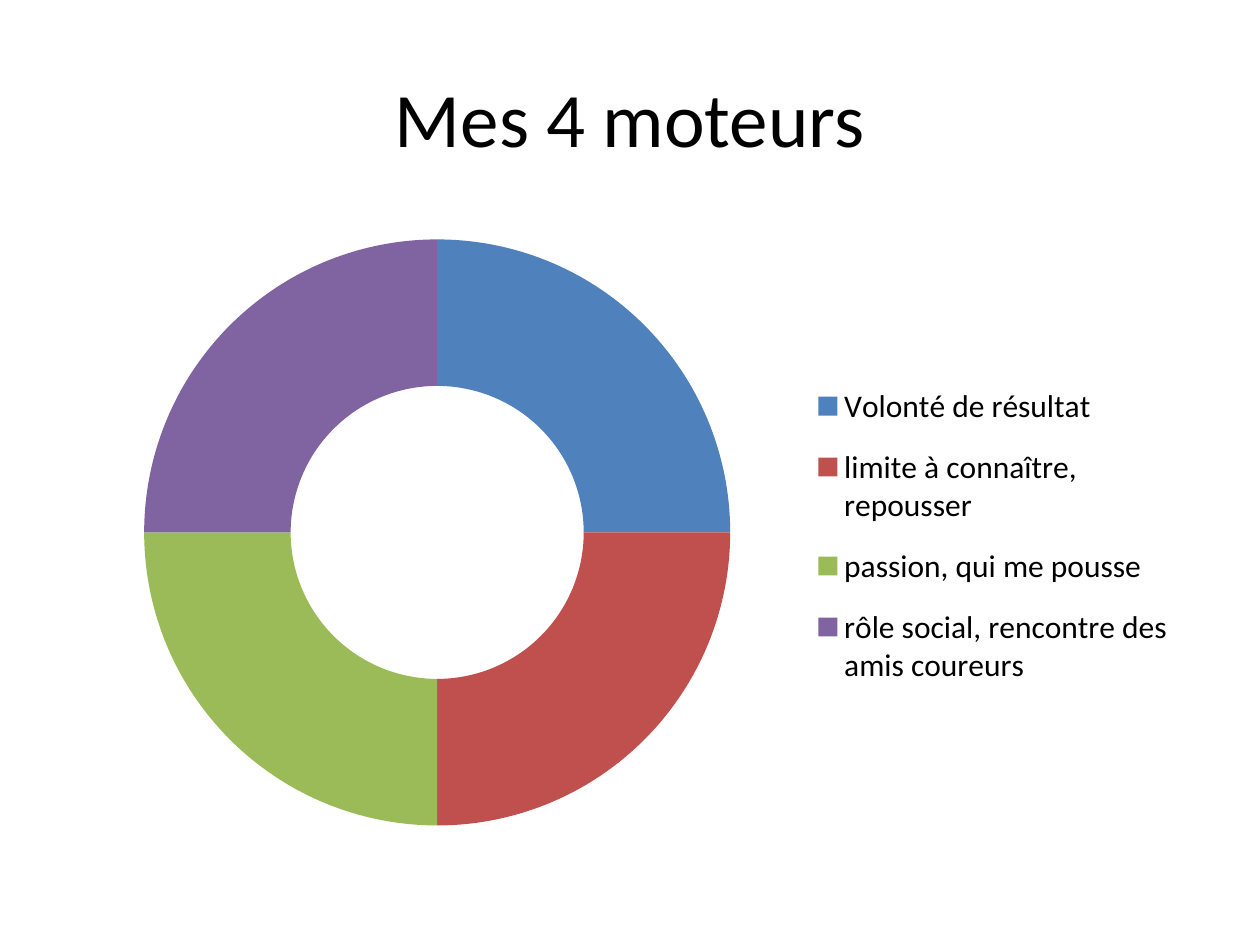
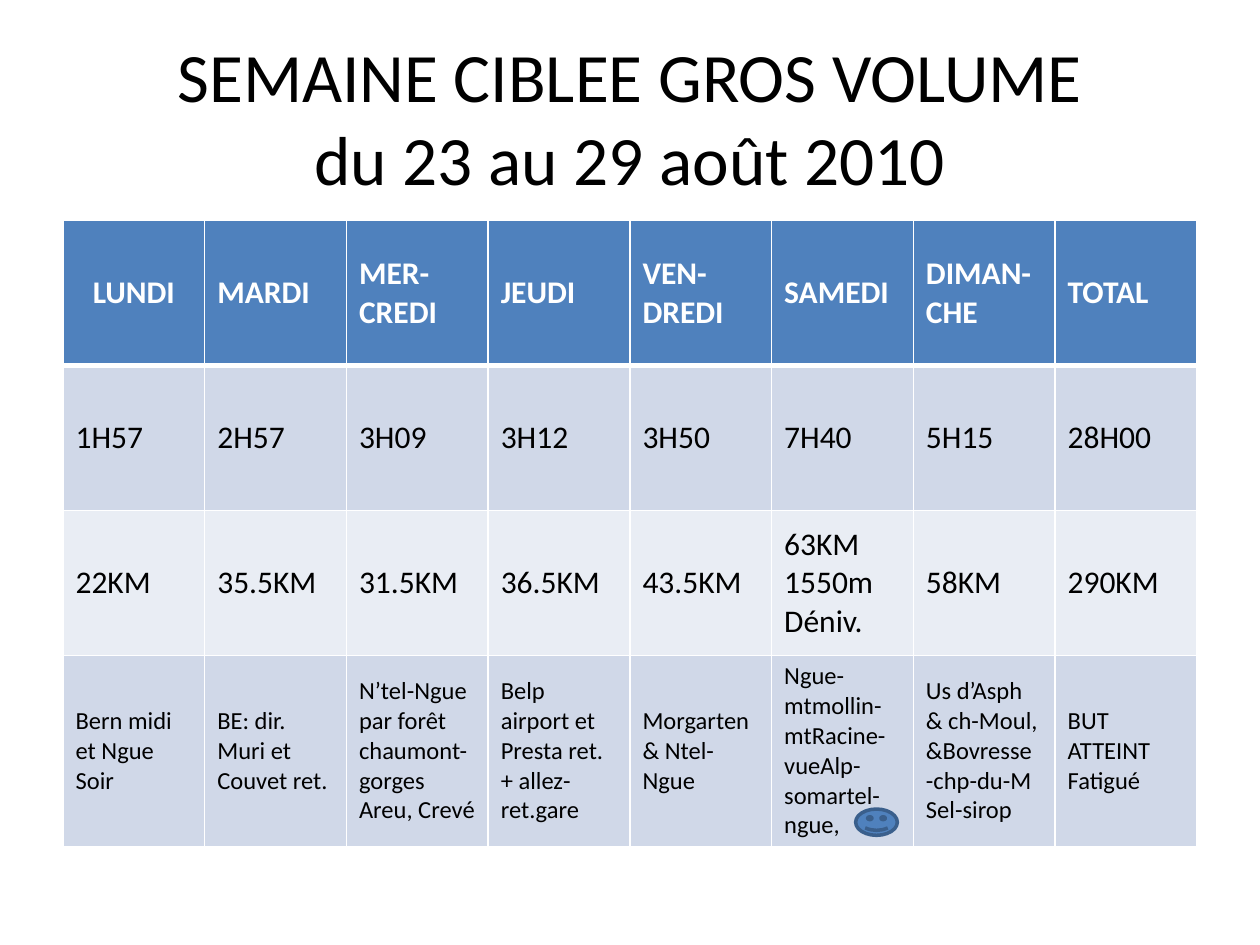
from lxml import etree
from pptx import Presentation
from pptx.chart.data import CategoryChartData
from pptx.dml.color import RGBColor
from pptx.enum.chart import XL_CHART_TYPE, XL_LEGEND_POSITION
from pptx.enum.shapes import MSO_SHAPE
from pptx.enum.text import MSO_ANCHOR, PP_ALIGN
from pptx.oxml.ns import qn
from pptx.util import Cm, Pt

DOUGHNUT = XL_CHART_TYPE.DOUGHNUT
LEGEND_RIGHT = XL_LEGEND_POSITION.RIGHT
SMILEY = MSO_SHAPE.SMILEY_FACE
MIDDLE = MSO_ANCHOR.MIDDLE
LEFT, CENTER = PP_ALIGN.LEFT, PP_ALIGN.CENTER

FONT = "Calibri"
COLORS = {
    "text": "000000",
    "white": "FFFFFF",
    "blue": "4F81BD",
    "red": "C0504D",
    "green": "9BBB59",
    "purple": "8064A2",
    "band": "D0D8E8",
    "light_band": "E9EDF4",
    "smiley_line": "3A5F8C",
}
CONTENT_FRAME = (Cm(1.27), Cm(4.45), Cm(22.86), Cm(12.57))


def style_font(font, size, color="text", bold=False):
    values = {"name": FONT, "size": Pt(size), "bold": bold}
    for name, value in values.items():
        setattr(font, name, value)
    font.color.rgb = RGBColor.from_string(COLORS[color])


def add_titled_page(title, size):
    page = deck.slides.add_slide(deck.slide_layouts[6])
    box = page.shapes.add_textbox(Cm(1.27), Cm(0.76), Cm(22.86), Cm(3.18))
    box.text_frame.word_wrap = True
    box.text_frame.vertical_anchor = MIDDLE
    para = box.text_frame.paragraphs[0]
    para.text = title
    para.alignment = CENTER
    for span in para.runs:
        style_font(span.font, size)
    # Line breaks take their height from the paragraph font
    style_font(para.font, size)
    return page


deck = Presentation()
deck.slide_width, deck.slide_height = Cm(25.4), Cm(19.05)

# Slide 1: the four motivations
page = add_titled_page("Mes 4 moteurs", 44)
motivations = {
    "Volonté de résultat": "blue",
    "limite à connaître, repousser": "red",
    "passion, qui me pousse": "green",
    "rôle social, rencontre des amis coureurs": "purple",
}
chart_data = CategoryChartData()
chart_data.categories = list(motivations)
chart_data.add_series("Series 1", [25] * len(motivations))
chart = page.shapes.add_chart(DOUGHNUT, *CONTENT_FRAME, chart_data).chart
style_font(chart.font, 18)
chart.has_title = False
chart.has_legend = True
chart.legend.position = LEGEND_RIGHT
chart.legend.include_in_layout = False
plot = chart.plots[0]
plot.vary_by_categories = True
for index, color in enumerate(motivations.values()):
    fill = plot.series[0].points[index].format.fill
    fill.solid()
    fill.fore_color.rgb = RGBColor.from_string(COLORS[color])

# Fixed places of ring and legend, as shares of the chart frame
plot_area = chart._chartSpace.chart.plotArea
legend = chart.legend._element
for layout in plot_area.findall(qn("c:layout")) + legend.findall(qn("c:layout")):
    layout.getparent().remove(layout)
placements = [
    (plot_area, 0, {"layoutTarget": "inner", "x": 0.07, "y": 0.03, "w": 0.52, "h": 0.94}),
    (legend, 1, {"x": 0.66, "y": 0.23, "w": 0.32, "h": 0.55}),
]
for parent, position, values in placements:
    layout = etree.Element(qn("c:layout"))
    parent.insert(position, layout)
    manual = etree.SubElement(layout, qn("c:manualLayout"))
    target = values.pop("layoutTarget", None)
    if target:
        etree.SubElement(manual, qn("c:layoutTarget"), val=target)
    for axis in "xy":
        etree.SubElement(manual, qn(f"c:{axis}Mode"), val="edge")
    for name, value in values.items():
        etree.SubElement(manual, qn(f"c:{name}"), val=str(value))

# Slide 2: the training week
page = add_titled_page("SEMAINE CIBLEE GROS VOLUME\vdu 23 au 29 août 2010", 39.6)
week = [
    ["LUNDI", "MARDI", "MER-CREDI", "JEUDI", "VEN-DREDI", "SAMEDI", "DIMAN-CHE", "TOTAL"],
    ["1H57", "2H57", "3H09", "3H12", "3H50", "7H40", "5H15", "28H00"],
    ["22KM", "35.5KM", "31.5KM", "36.5KM", "43.5KM", "63KM\n1550m\nDéniv.", "58KM", "290KM"],
    [
        "Bern midi et Ngue Soir",
        "BE: dir. Muri et Couvet ret.",
        "N’tel-Ngue par forêt chaumont-gorges Areu, Crevé",
        "Belp airport et Presta ret. + allez-ret.gare",
        "Morgarten & Ntel-Ngue",
        "Ngue-mtmollin-mtRacine-vueAlp-somartel-ngue,",
        "Us d’Asph & ch-Moul, &Bovresse -chp-du-M\nSel-sirop",
        "BUT ATTEINT\nFatigué",
    ],
]
row_styles = [
    {"height": 2.92, "fill": "blue", "size": 18, "color": "white", "bold": True},
    {"height": 2.92, "fill": "band", "size": 18, "color": "text", "bold": False},
    {"height": 2.92, "fill": "light_band", "size": 18, "color": "text", "bold": False},
    {"height": 3.85, "fill": "band", "size": 14, "color": "text", "bold": False},
]
table = page.shapes.add_table(len(week), len(week[0]), *CONTENT_FRAME).table
for column in table.columns:
    column.width = Cm(22.86 / len(week[0]))
for row_index, (texts, style) in enumerate(zip(week, row_styles)):
    table.rows[row_index].height = Cm(style["height"])
    for column_index, text in enumerate(texts):
        cell = table.cell(row_index, column_index)
        cell.text = text
        cell.vertical_anchor = MIDDLE
        for para in cell.text_frame.paragraphs:
            para.alignment = CENTER if text == "LUNDI" else LEFT
            for span in para.runs:
                style_font(span.font, style["size"], style["color"], style["bold"])

        # A thick rule separates the header from the rows below
        widths = {"L": 1, "R": 1, "T": 3 if row_index == 1 else 1, "B": 3 if row_index == 0 else 1}
        cell_properties = cell._tc.get_or_add_tcPr()
        for side, width in widths.items():
            border = etree.SubElement(cell_properties, qn(f"a:ln{side}"), w=str(Pt(width)))
            border_fill = etree.SubElement(border, qn("a:solidFill"))
            etree.SubElement(border_fill, qn("a:srgbClr"), val=COLORS["white"])
        cell.fill.solid()
        cell.fill.fore_color.rgb = RGBColor.from_string(COLORS[style["fill"]])

smiley = page.shapes.add_shape(SMILEY, Cm(17.25), Cm(16.31), Cm(0.84), Cm(0.53))
smiley.shadow.inherit = False
smiley.fill.solid()
smiley.fill.fore_color.rgb = RGBColor.from_string(COLORS["blue"])
smiley.line.color.rgb = RGBColor.from_string(COLORS["smiley_line"])
smiley.line.width = Pt(2)

deck.save("out.pptx")
